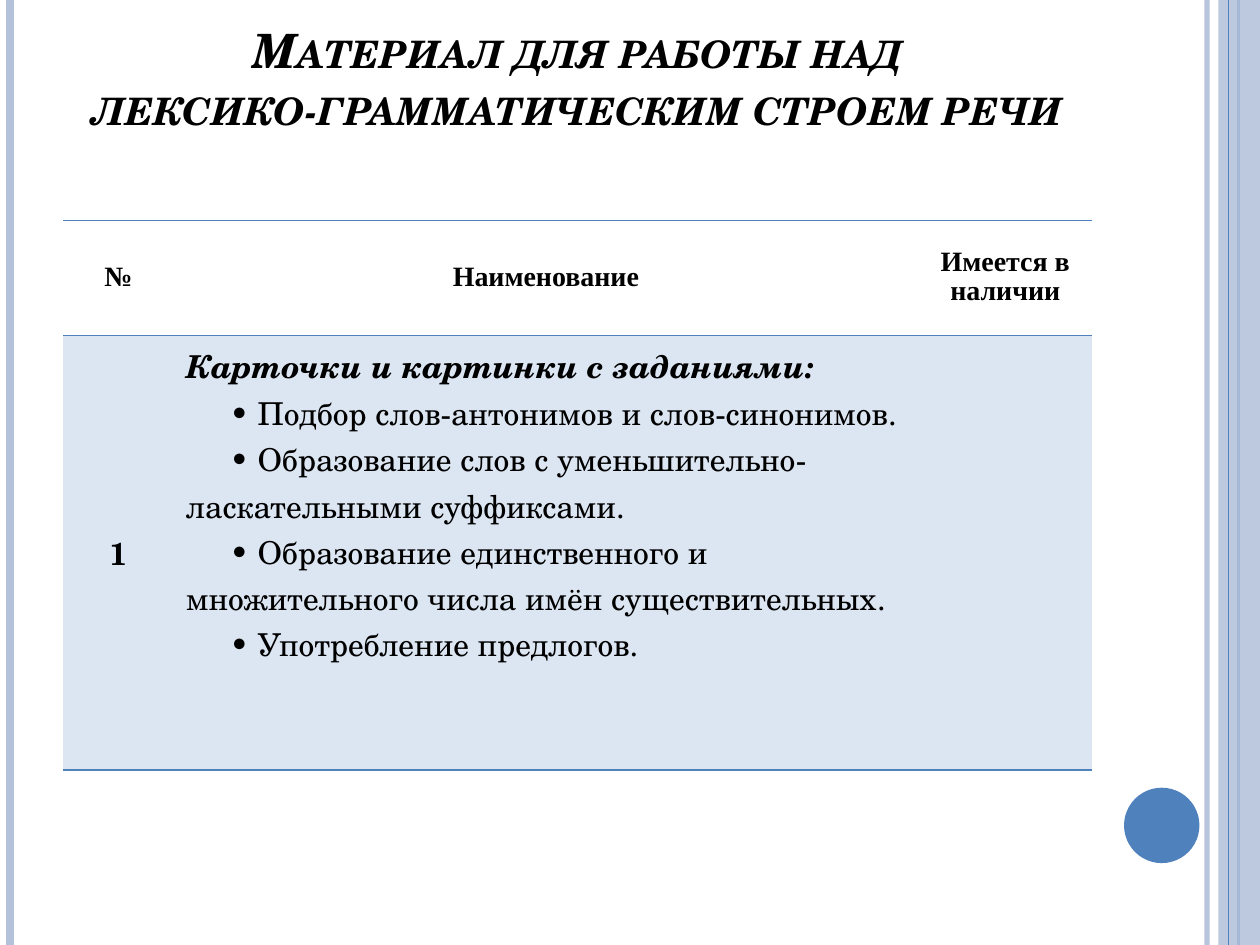
from dataclasses import dataclass
from lxml import etree
from pptx import Presentation
from pptx.dml.color import RGBColor
from pptx.enum.shapes import MSO_CONNECTOR, MSO_SHAPE
from pptx.enum.text import MSO_ANCHOR, PP_ALIGN
from pptx.oxml.ns import qn
from pptx.util import Cm, Pt

TITLE = "Материал для работы над\vлексико-грамматическим строем речи"
HEADERS = ["№", "Наименование", "Имеется в наличии"]
NUMBER = "1"
SUBJECT = "Карточки и картинки с заданиями:"
TASKS = [
    "Подбор слов-антонимов и слов-синонимов.",
    "Образование слов с уменьшительно-ласкательными суффиксами.",
    "Образование единственного и множительного числа имён существительных.",
    "Употребление предлогов.",
]
COLUMN_WIDTHS = [2.23, 15.01, 3.51]
ROW_HEIGHTS = [2.31, 8.76]

STRAIGHT = MSO_CONNECTOR.STRAIGHT
RECTANGLE, OVAL = MSO_SHAPE.RECTANGLE, MSO_SHAPE.OVAL
MIDDLE, BOTTOM = MSO_ANCHOR.MIDDLE, MSO_ANCHOR.BOTTOM
CENTER, LEFT = PP_ALIGN.CENTER, PP_ALIGN.LEFT


@dataclass(frozen=True)
class Theme:
    accent: str = "4F81BD"
    pale: str = "B3C1DB"
    row: str = "DCE6F2"
    text: str = "000000"
    serif: str = "TeX Gyre Schola"
    header_font: str = "Times New Roman"
    title_size: int = 27
    header_size: int = 16
    body_size: int = 18


THEME = Theme()
SLIDE_WIDTH, SLIDE_HEIGHT = 25.4, 19.05
LEFT_EDGE, CONTENT_WIDTH = 1.27, 20.75
TABLE_TOP = 4.45


def color(value):
    return RGBColor.from_string(value)


def set_alpha(element, percent):
    for node in element.iter(qn("a:srgbClr")):
        etree.SubElement(node, qn("a:alpha"), val=str(percent * 1000))


def add_rule(slide, x, line_color, width, alpha=100):
    rule = slide.shapes.add_connector(STRAIGHT, Cm(x), 0, Cm(x), Cm(SLIDE_HEIGHT))
    rule.line.color.rgb = color(line_color)
    rule.line.width = Pt(width)
    properties = rule._element.spPr
    if alpha < 100:
        set_alpha(properties, alpha)
    etree.SubElement(properties, qn("a:effectLst"))


def add_plain_shape(slide, kind, left, top, width, height, fill, alpha=100):
    shape = slide.shapes.add_shape(kind, Cm(left), Cm(top), Cm(width), Cm(height))
    shape.shadow.inherit = False
    shape.fill.solid()
    shape.fill.fore_color.rgb = color(fill)
    shape.line.fill.background()
    if alpha < 100:
        set_alpha(shape._element.spPr, alpha)


def format_paragraph(paragraph, size, font, align=LEFT, bold=False, italic=False):
    paragraph.alignment = align
    for run in paragraph.runs:
        run.font.size = Pt(size)
        run.font.name = font
        run.font.bold = bold
        run.font.italic = italic
        run.font.color.rgb = color(THEME.text)


def add_decoration(slide):
    add_rule(slide, 24.33, THEME.pale, 3, 93)
    add_rule(slide, 0.2, THEME.pale, 4.5)
    add_rule(slide, 24.97, THEME.accent, 1.5)
    add_plain_shape(slide, RECTANGLE, 24.56, 0, 0.84, SLIDE_HEIGHT, THEME.pale, 87)
    add_rule(slide, 24.77, THEME.accent, 0.75)
    add_plain_shape(slide, OVAL, 22.66, 15.88, 1.52, 1.52, THEME.accent)


def add_title(slide):
    box = slide.shapes.add_textbox(
        Cm(LEFT_EDGE), Cm(0.76), Cm(CONTENT_WIDTH), Cm(3.18))
    frame = box.text_frame
    frame.word_wrap = True
    frame.vertical_anchor = BOTTOM
    frame.margin_bottom = Cm(1.22)
    frame.text = TITLE
    paragraph = frame.paragraphs[0]
    format_paragraph(paragraph, THEME.title_size, THEME.serif, CENTER, True, True)
    for run in paragraph.runs:
        run.font._element.set("cap", "small")


def set_borders(cell, visible):
    properties = cell._tc.get_or_add_tcPr()
    for position, side in enumerate(("lnL", "lnR", "lnT", "lnB")):
        line = etree.Element(qn(f"a:{side}"), w=str(Pt(1)))
        if side in visible:
            fill = etree.SubElement(line, qn("a:solidFill"))
            etree.SubElement(fill, qn("a:srgbClr"), val=THEME.accent)
        else:
            etree.SubElement(line, qn("a:noFill"))
        properties.insert(position, line)


def add_table(slide):
    table = slide.shapes.add_table(
        len(ROW_HEIGHTS), len(COLUMN_WIDTHS), Cm(LEFT_EDGE), Cm(TABLE_TOP),
        Cm(sum(COLUMN_WIDTHS)), Cm(sum(ROW_HEIGHTS))).table
    for column, width in zip(table.columns, COLUMN_WIDTHS):
        column.width = Cm(width)
    for row, height in zip(table.rows, ROW_HEIGHTS):
        row.height = Cm(height)

    for index, header in enumerate(HEADERS):
        cell = table.cell(0, index)
        cell.fill.background()
        cell.vertical_anchor = MIDDLE
        cell.margin_left = cell.margin_right = Cm(0.18)
        cell.margin_top = cell.margin_bottom = 0
        cell.text_frame.text = header
        paragraph = cell.text_frame.paragraphs[0]
        paragraph.line_spacing = Pt(16.1)
        format_paragraph(paragraph, THEME.header_size, THEME.header_font, CENTER, True)
        set_borders(cell, ("lnT", "lnB"))

        body = table.cell(1, index)
        body.fill.solid()
        body.fill.fore_color.rgb = color(THEME.row)
        set_borders(body, ("lnT", "lnB"))

    number = table.cell(1, 0)
    number.vertical_anchor = MIDDLE
    number.text_frame.text = NUMBER
    format_paragraph(
        number.text_frame.paragraphs[0], THEME.body_size, THEME.serif, CENTER, True)

    frame = table.cell(1, 1).text_frame
    frame.text = SUBJECT
    format_paragraph(frame.paragraphs[0], THEME.body_size, THEME.serif, LEFT, True, True)
    for task in TASKS:
        paragraph = frame.add_paragraph()
        paragraph.text = f"• {task}"
        format_paragraph(paragraph, THEME.body_size, THEME.serif)
        paragraph._p.get_or_add_pPr().set("indent", str(Cm(0.88)))


def main():
    presentation = Presentation()
    presentation.slide_width = Cm(SLIDE_WIDTH)
    presentation.slide_height = Cm(SLIDE_HEIGHT)
    slide = presentation.slides.add_slide(presentation.slide_layouts[6])
    add_decoration(slide)
    add_title(slide)
    add_table(slide)
    presentation.save("out.pptx")


if __name__ == "__main__":
    main()
